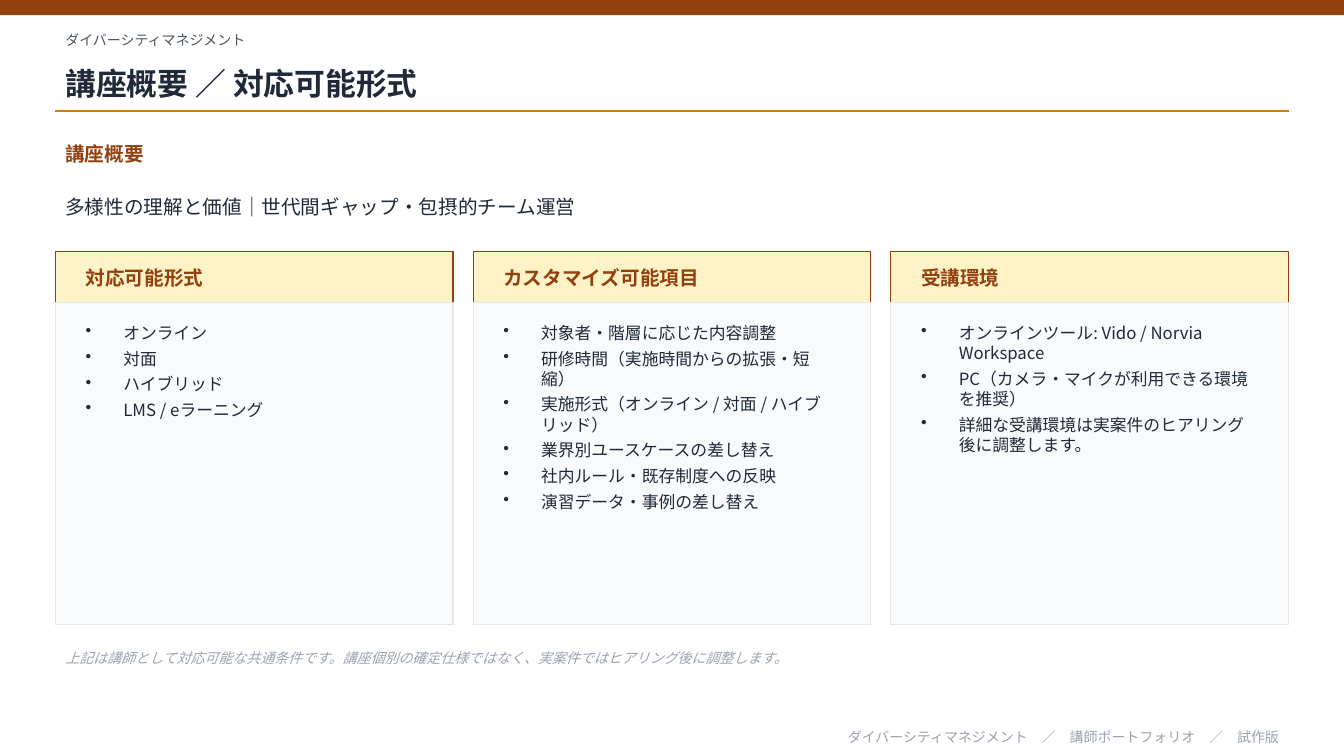
from dataclasses import dataclass

from lxml.etree import SubElement
from pptx import Presentation
from pptx.dml.color import RGBColor
from pptx.enum.shapes import MSO_CONNECTOR, MSO_SHAPE
from pptx.enum.text import MSO_ANCHOR as Anchor, PP_ALIGN as Align
from pptx.oxml.ns import qn
from pptx.util import Pt


@dataclass(frozen=True)
class Theme:
    font: str = "Noto Sans CJK JP"
    brown: RGBColor = RGBColor.from_string("92400E")
    amber: RGBColor = RGBColor.from_string("D97706")
    cream: RGBColor = RGBColor.from_string("FEF3C7")
    panel: RGBColor = RGBColor.from_string("F9FAFB")
    border: RGBColor = RGBColor.from_string("E5E7EB")
    ink: RGBColor = RGBColor.from_string("1F2937")
    slate: RGBColor = RGBColor.from_string("4B5563")
    muted: RGBColor = RGBColor.from_string("9CA3AF")
    title: int = 22
    heading: int = 14
    item: int = 12
    small: int = 10


theme = Theme()
deck = Presentation()
deck.slide_width, deck.slide_height = Pt(960), Pt(540)
page = deck.slides.add_slide(deck.slide_layouts[6])

margin, content_width = 39.6, 880.8
column_gap, inset = 14.4, 14.4
column_width = (content_width - 2 * column_gap) / 3


def add_text(area, lines, size, color, bold=None, italic=None,
             align=None, anchor=Anchor.MIDDLE, bullets=False):
    box = page.shapes.add_textbox(*map(Pt, area))
    frame = box.text_frame
    frame.word_wrap = True
    frame.vertical_anchor = anchor
    frame.text = "\n".join(lines)
    for para in frame.paragraphs:
        if align is not None:
            para.alignment = align
        if bullets:
            para.space_after = Pt(4)
            properties = para._p.get_or_add_pPr()
            properties.set("marL", str(Pt(27)))
            properties.set("indent", str(-Pt(27)))
            SubElement(properties, qn("a:buChar"), char="•")
        font = para.font
        font.name, font.size = theme.font, Pt(size)
        font.bold, font.italic = bold, italic
        font.color.rgb = color
        # Japanese glyphs use the East Asian font slot
        defaults = para._p.pPr.find(qn("a:defRPr"))
        SubElement(defaults, qn("a:ea"), typeface=theme.font)


def add_block(area, fill, outline=None):
    block = page.shapes.add_shape(MSO_SHAPE.RECTANGLE, *map(Pt, area))
    block.shadow.inherit = False
    block.fill.solid()
    block.fill.fore_color.rgb = fill
    if outline is None:
        block.line.fill.background()
    else:
        block.line.color.rgb = outline
        block.line.width = Pt(0.75)


# Top band and title
add_block((0, 0, 960, 10.8), theme.brown)
add_text((margin, 18, content_width, 21.6), ["ダイバーシティマネジメント"],
         theme.small, theme.slate)
add_text((margin, 39.6, content_width, 39.6), ["講座概要 ／ 対応可能形式"],
         theme.title, theme.ink, bold=True)
rule = page.shapes.add_connector(MSO_CONNECTOR.STRAIGHT, Pt(margin), Pt(79.2),
                                 Pt(margin + content_width), Pt(79.2))
rule.line.color.rgb = theme.amber
rule.line.width = Pt(1)
SubElement(rule._element.spPr, qn("a:effectLst"))

# Course overview
add_text((margin, 97.2, content_width, 25.2), ["講座概要"],
         theme.heading, theme.brown, bold=True)
add_text((margin, 126, content_width, 43.2),
         ["多様性の理解と価値｜世代間ギャップ・包摂的チーム運営"],
         theme.heading, theme.ink)

# Three columns
columns = [
    ("対応可能形式", ["オンライン", "対面", "ハイブリッド", "LMS / eラーニング"]),
    ("カスタマイズ可能項目", [
        "対象者・階層に応じた内容調整",
        "研修時間（実施時間からの拡張・短縮）",
        "実施形式（オンライン / 対面 / ハイブリッド）",
        "業界別ユースケースの差し替え",
        "社内ルール・既存制度への反映",
        "演習データ・事例の差し替え",
    ]),
    ("受講環境", [
        "オンラインツール: Vido / Norvia Workspace",
        "PC（カメラ・マイクが利用できる環境を推奨）",
        "詳細な受講環境は実案件のヒアリング後に調整します。",
    ]),
]
for index, (heading, items) in enumerate(columns):
    left = margin + index * (column_width + column_gap)
    text_left, text_width = left + inset, column_width - 2 * inset
    add_block((left, 180, column_width, 36), theme.cream, theme.brown)
    add_text((text_left, 180, text_width, 36), [heading],
             theme.heading, theme.brown, bold=True)
    add_block((left, 216, column_width, 230.4), theme.panel, theme.border)
    add_text((text_left, 226.8, text_width, 205.2), items,
             theme.item, theme.ink, anchor=Anchor.TOP, bullets=True)

# Note and footer
add_text((margin, 457.2, content_width, 25.2),
         ["上記は講師として対応可能な共通条件です。講座個別の確定仕様ではなく、"
          "実案件ではヒアリング後に調整します。"],
         theme.small, theme.muted, italic=True)
add_text((margin, 518.4, content_width, 15.84),
         ["ダイバーシティマネジメント　／　講師ポートフォリオ　／　試作版"],
         theme.small, theme.muted, align=Align.RIGHT)

deck.save("out.pptx")
